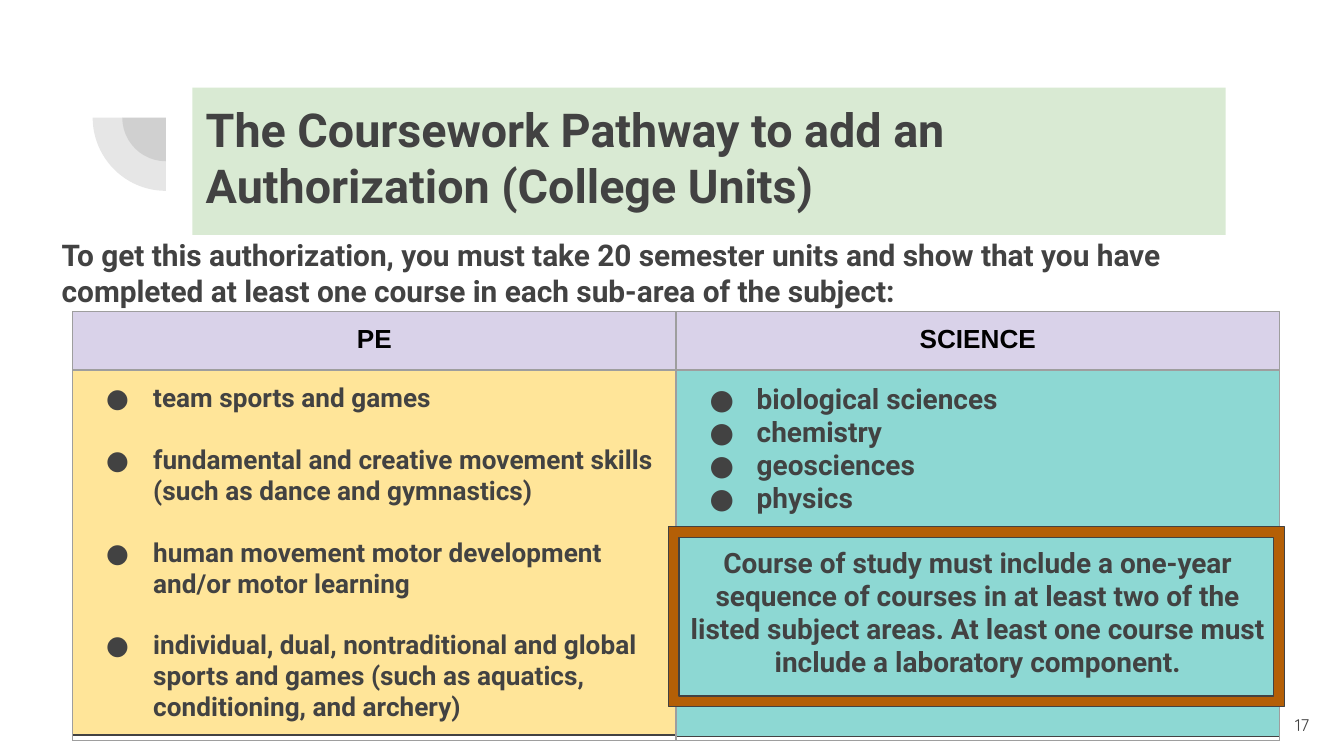
from dataclasses import dataclass

from lxml.etree import SubElement
from pptx import Presentation
from pptx.dml.color import RGBColor
from pptx.enum.shapes import MSO_SHAPE
from pptx.enum.text import MSO_ANCHOR, MSO_AUTO_SIZE, PP_ALIGN
from pptx.oxml.ns import qn
from pptx.util import Pt

DARK = RGBColor(0x42, 0x42, 0x42)
BLACK = RGBColor(0x00, 0x00, 0x00)
GREEN = RGBColor(0xD9, 0xEA, 0xD3)
LILAC = RGBColor(0xD9, 0xD2, 0xE9)
YELLOW = RGBColor(0xFF, 0xE5, 0x99)
TEAL = RGBColor(0x8D, 0xD8, 0xD3)
BROWN = RGBColor(0xB4, 0x5F, 0x06)
GREY = RGBColor(0x9E, 0x9E, 0x9E)

INSET = 7.2
TABLE_LEFT, TABLE_TOP, COL_WIDTH = 38.9, 167, 323.3
ROW_HEIGHTS = (30.5, 196)


@dataclass
class Box:
    left: float
    top: float
    width: float
    height: float

    def points(self) -> tuple:
        return Pt(self.left), Pt(self.top), Pt(self.width), Pt(self.height)


@dataclass
class Subject:
    name: str
    color: RGBColor
    top: float
    size: float
    gap: float
    areas: tuple
    note: str = ""


SUBJECTS = (
    Subject("PE", YELLOW, 197.3, 14, 16.5, (
        "team sports and games",
        "fundamental and creative movement skills (such as dance and gymnastics)",
        "human movement motor development and/or motor learning",
        "individual, dual, nontraditional and global sports and games "
        "(such as aquatics, conditioning, and archery)",
    )),
    Subject("SCIENCE", TEAL, 198, 15, 0, (
        "biological sciences", "chemistry", "geosciences", "physics",
    ), "Course of study must include a one-year sequence of courses in at least "
       "two of the listed subject areas. At least one course must include a "
       "laboratory component."),
)


def add_shape(s, kind: MSO_SHAPE, box: Box, color: RGBColor, outlined: bool = True):
    sp = s.shapes.add_shape(kind, *box.points())
    sp.shadow.inherit = False
    sp.fill.solid()
    sp.fill.fore_color.rgb = color
    if outlined:
        sp.line.color.rgb = DARK
        sp.line.width = Pt(0.75)
    else:
        sp.line.fill.background()
    return sp


def add_quarter(s, size: float) -> None:
    """Draw a translucent quarter disc around the shared corner point."""
    box = Box(88.9 - size / 2, 63 - size / 2, size, size)
    sp = add_shape(s, MSO_SHAPE.PIE, box, DARK, outlined=False)
    sp.adjustments[0], sp.adjustments[1] = 108, 162
    sp.rotation = 270
    color = sp.fill._xPr.find(".//" + qn("a:srgbClr"))
    SubElement(color, qn("a:alpha"), val="13000")


def format_paragraph(p, size: float, font: str = "Roboto", color: RGBColor = DARK,
                     bold: bool = True, align: PP_ALIGN = PP_ALIGN.LEFT) -> None:
    p.alignment = align
    for r in p.runs:
        r.font.size = Pt(size)
        r.font.name = font
        r.font.bold = bold
        r.font.color.rgb = color


def set_insets(item) -> None:
    item.margin_left = item.margin_right = Pt(INSET)
    item.margin_top = item.margin_bottom = Pt(INSET)


def add_text(s, text: str, box: Box, size: float, **style):
    tf = s.shapes.add_textbox(*box.points()).text_frame
    tf.word_wrap = True
    set_insets(tf)
    tf.text = text
    format_paragraph(tf.paragraphs[0], size, **style)
    return tf


def add_bullet(p) -> None:
    pPr = p._p.get_or_add_pPr()
    pPr.set("marL", str(Pt(36)))
    pPr.set("indent", str(Pt(-25.2)))
    SubElement(SubElement(pPr, qn("a:buClr")), qn("a:srgbClr"), val=str(DARK))
    SubElement(pPr, qn("a:buFont"), typeface="Roboto")
    SubElement(pPr, qn("a:buChar"), char="●")


def add_borders(cell) -> None:
    tcPr = cell._tc.get_or_add_tcPr()
    for side in ("lnL", "lnR", "lnT", "lnB"):
        ln = SubElement(tcPr, qn("a:" + side), w=str(Pt(0.75)))
        SubElement(SubElement(ln, qn("a:solidFill")), qn("a:srgbClr"), val=str(GREY))


def fill_subject(tbl, col: int, subject: Subject) -> None:
    head, body = tbl.cell(0, col), tbl.cell(1, col)
    for cell in (head, body):
        set_insets(cell)
        add_borders(cell)
    head.fill.solid()
    head.fill.fore_color.rgb = LILAC
    body.fill.background()

    head.text_frame.text = subject.name
    format_paragraph(head.text_frame.paragraphs[0], 14, "Arial", BLACK,
                     align=PP_ALIGN.CENTER)

    tf = body.text_frame
    for i, area in enumerate(subject.areas):
        p = tf.add_paragraph() if i else tf.paragraphs[0]
        p.text = area
        format_paragraph(p, subject.size)
        if i:
            p.space_before = Pt(subject.gap)
        add_bullet(p)
    if subject.note:
        p = tf.add_paragraph()
        p.text = subject.note
        p.space_before = Pt(17.6)
        format_paragraph(p, subject.size, align=PP_ALIGN.CENTER)


def main() -> None:
    prs = Presentation()
    prs.slide_width, prs.slide_height = Pt(720), Pt(405)
    s = prs.slides.add_slide(prs.slide_layouts[5])

    # Corner ornament
    for size in (46.8, 78.5):
        add_quarter(s, size)

    # Title
    title = s.shapes.title
    title.left, title.top, title.width, title.height = Box(103, 47, 553.6, 78.8).points()
    title.fill.solid()
    title.fill.fore_color.rgb = GREEN
    tf = title.text_frame
    tf.text = "The Coursework Pathway to add an Authorization (College Units)"
    tf.auto_size = MSO_AUTO_SIZE.NONE
    tf.vertical_anchor = MSO_ANCHOR.TOP
    tf.word_wrap = True
    set_insets(tf)
    format_paragraph(tf.paragraphs[0], 25)

    # Slide number and introduction
    tf = add_text(s, "17", Box(665.3, 373, 43.2, 31), 9, font="Quicksand",
                  bold=False, align=PP_ALIGN.RIGHT)
    tf.vertical_anchor = MSO_ANCHOR.MIDDLE
    add_text(s, "To get this authorization, you must take 20 semester units and show "
             "that you have completed at least one course in each sub-area of the "
             "subject:", Box(26, 119.5, 676, 46.8), 16)

    # Coloured panels behind the table body
    for i, subject in enumerate(SUBJECTS):
        box = Box(TABLE_LEFT + i * COL_WIDTH, subject.top, COL_WIDTH, 196.6)
        add_shape(s, MSO_SHAPE.RECTANGLE, box, subject.color)

    # Subject table
    box = Box(TABLE_LEFT, TABLE_TOP, COL_WIDTH * len(SUBJECTS), sum(ROW_HEIGHTS))
    tbl = s.shapes.add_table(len(ROW_HEIGHTS), len(SUBJECTS), *box.points()).table
    tbl.first_row = tbl.horz_banding = False
    for row, height in zip(tbl.rows, ROW_HEIGHTS):
        row.height = Pt(height)
    for i, subject in enumerate(SUBJECTS):
        tbl.columns[i].width = Pt(COL_WIDTH)
        fill_subject(tbl, i, subject)

    # Frame around the science note
    frame = add_shape(s, MSO_SHAPE.FRAME, Box(358, 282.2, 330, 96.4), BROWN)
    frame.adjustments[0] = 0.06

    prs.save("out.pptx")


if __name__ == "__main__":
    main()
